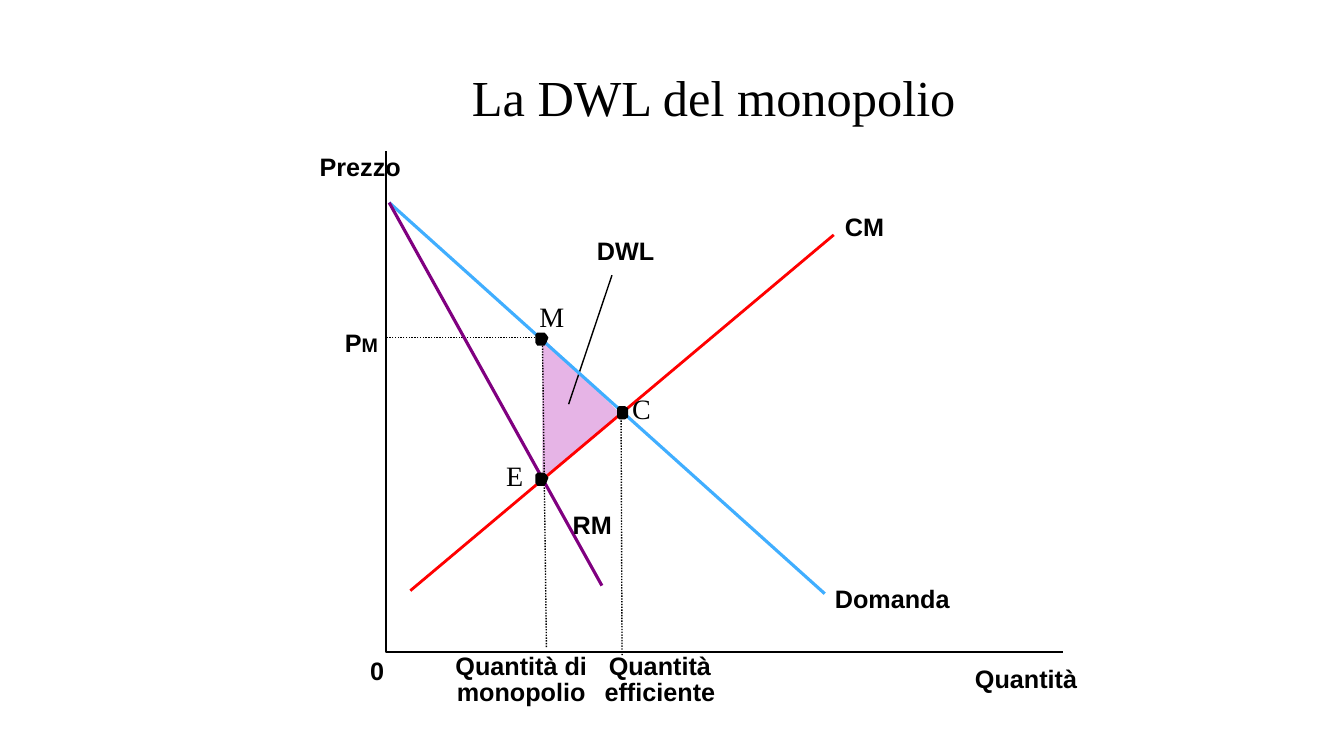
import pptx
import pptx.util
import pptx.dml.color
import pptx.enum.dml
import pptx.enum.shapes
import pptx.enum.text
import pptx.oxml

RGB = pptx.dml.color.RGBColor
ALIGN = pptx.enum.text.PP_ALIGN
PX = 9144

BLACK = RGB(0, 0, 0)
RED = RGB(0xFF, 0, 0)
BLUE = RGB(0x40, 0xAE, 0xFF)
PURPLE = RGB(0x80, 0, 0x80)
LILAC = RGB(0xE6, 0xB4, 0xE6)

TITLE = ("La DWL del monopolio", 283, 33, 850, 125)

POINT_M = (538, 335)
POINT_E = (538, 474)
POINT_C = (616, 411)
INTERCEPT = (386, 201)
AXES = [(383, 150), (383, 647), (1054, 647)]

GUIDES = [
    ((617, 650), POINT_C),
    ((542, 642), POINT_M),
    ((539, 335), (384, 335)),
]
CURVES = [
    ((827, 233), (407, 586), RED, 2),
    ((564, 401), (607, 273), BLACK, 1),
    (INTERCEPT, (818, 589), BLUE, 2.25),
    (INTERCEPT, (597, 581), PURPLE, 2.25),
]

WIDE_DOT = [(0, 8), (2, 8), (4, 5), (6, 0), (4, -3), (2, -5),
            (0, -5), (-5, -5), (-7, -3), (-7, 0), (-7, 5), (-5, 8)]
NARROW_DOT = [(0, 5), (4, 5), (7, 3), (7, 0), (7, -6), (4, -8),
              (0, -8), (-2, -8), (-4, -6), (-4, 0), (-4, 3), (-2, 5)]
DOTS = [(POINT_C, NARROW_DOT), (POINT_E, WIDE_DOT), (POINT_M, WIDE_DOT)]

LABELS = [
    ("Prezzo", 317, 150, 81, 30),
    ("Quantità", 967, 658, 102, 30),
    ("0", 367, 650, 12, 30),
    ("DWL", 592, 233, 57, 30),
    ("Domanda", 828, 579, 115, 30),
    ("CM", 838, 210, 39, 30),
    ("RM", 568, 505, 39, 30),
]
QUANTITIES = [
    ("Quantità\nefficiente", 599, 650, 111, 51),
    ("Quantità di\nmonopolio", 451, 650, 132, 51),
]
PRICE = ("P", 342, 325, 33, 30)
PRICE_SUFFIX = "M"
POINT_NAMES = [
    ("M", 535, 297, 25, 34),
    ("E", 502, 455, 25, 34),
    ("C", 627, 388, 19, 34),
]

deck = pptx.Presentation()
deck.slide_width = 1333 * PX
deck.slide_height = 750 * PX
slide = deck.slides.add_slide(deck.slide_layouts[6])


def add_outline(points, fill=None, closed=True):
    builder = slide.shapes.build_freeform(*points[0], scale=PX)
    builder.add_line_segments(points[1:], close=closed)
    outline = builder.convert_to_shape()
    outline.shadow.inherit = False
    if fill is None:
        outline.fill.background()
        outline.line.color.rgb = BLACK
        outline.line.width = pptx.util.Pt(1)
    else:
        outline.fill.solid()
        outline.fill.fore_color.rgb = fill
        outline.line.fill.background()


def add_line(start, end, color, width, dotted=False):
    line = slide.shapes.add_connector(
        pptx.enum.shapes.MSO_CONNECTOR.STRAIGHT,
        *(value * PX for value in start + end))
    line.line.color.rgb = color
    line.line.width = pptx.util.Pt(width)
    if dotted:
        line.line.dash_style = pptx.enum.dml.MSO_LINE.ROUND_DOT
    line._element.spPr.append(pptx.oxml.parse_xml(
        '<a:effectLst xmlns:a="http://schemas.openxmlformats.org/drawingml/2006/main"/>'))


def style_run(run, size, font, bold):
    run.font.size = pptx.util.Pt(size)
    run.font.name = font
    run.font.bold = bold
    run.font.color.rgb = BLACK


def add_text(label, size=18, font="Arial", bold=True, align=ALIGN.LEFT, spacing=None):
    text, *box = label
    frame = slide.shapes.add_textbox(*(value * PX for value in box)).text_frame
    frame.margin_left = frame.margin_right = frame.margin_top = frame.margin_bottom = 0
    frame.word_wrap = False
    frame.text = text
    for paragraph in frame.paragraphs:
        paragraph.alignment = align
        paragraph.line_spacing = spacing
        for run in paragraph.runs:
            style_run(run, size, font, bold)
    return frame


title = add_text(TITLE, 36, "Times New Roman", False, ALIGN.CENTER)
title.word_wrap = True
title.vertical_anchor = pptx.enum.text.MSO_ANCHOR.MIDDLE

add_outline([POINT_M, POINT_E, POINT_C], LILAC)
for start, end in GUIDES:
    add_line(start, end, BLACK, 1, dotted=True)
for curve in CURVES:
    add_line(*curve)
add_outline(AXES, closed=False)
for (x, y), offsets in DOTS:
    add_outline([(x + dx, y + dy) for dx, dy in offsets], BLACK)

for label in LABELS:
    add_text(label)
for quantity in QUANTITIES:
    add_text(quantity, align=ALIGN.CENTER, spacing=0.85)
for point_name in POINT_NAMES:
    add_text(point_name, 20, "Times New Roman", False)
suffix = add_text(PRICE).paragraphs[0].add_run()
suffix.text = PRICE_SUFFIX
style_run(suffix, 14, "Arial", True)

deck.save("out.pptx")
